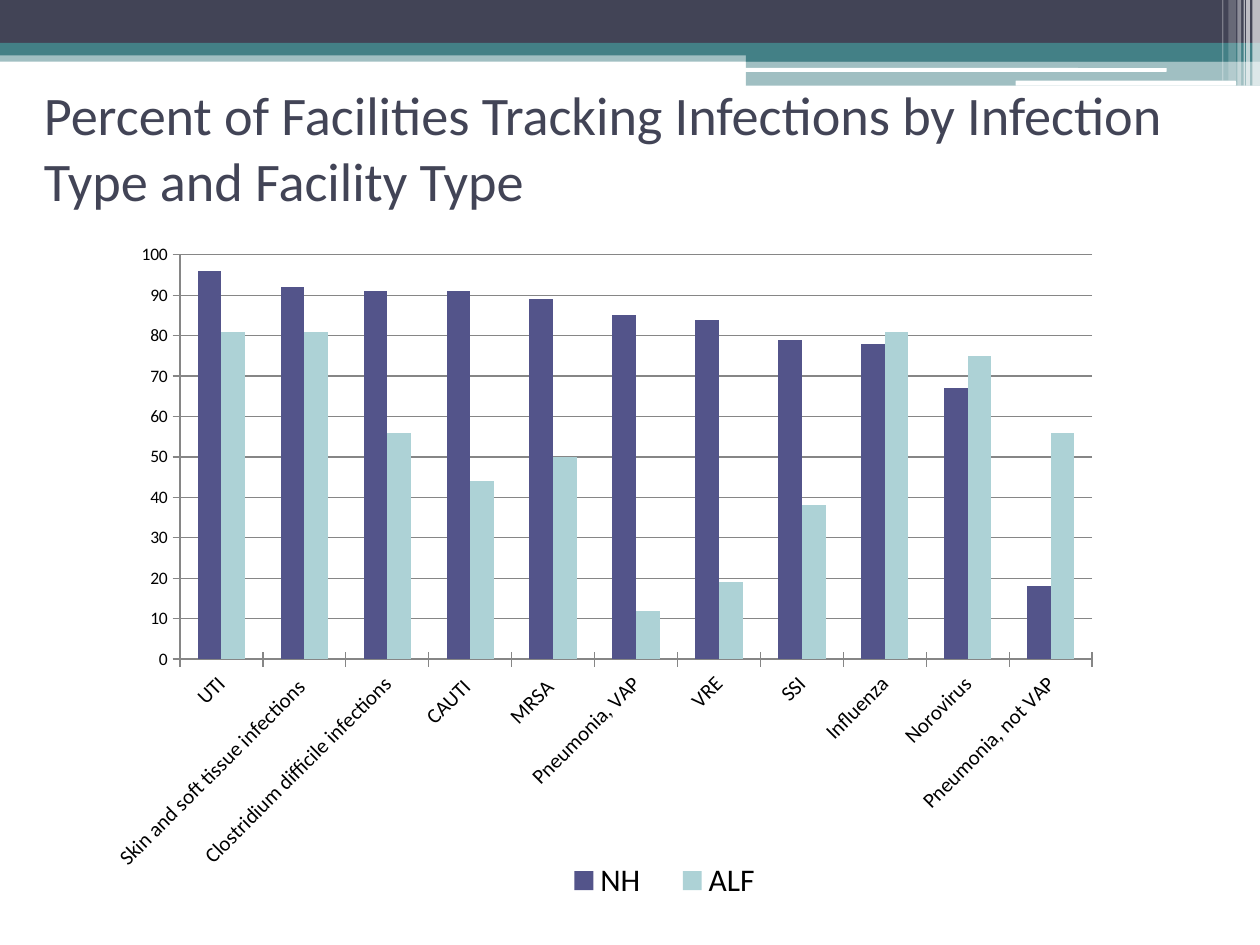
from lxml import etree
from pptx import Presentation
from pptx.chart.data import CategoryChartData
from pptx.dml.color import RGBColor
from pptx.enum.chart import XL_CHART_TYPE, XL_LEGEND_POSITION, XL_TICK_MARK
from pptx.enum.shapes import MSO_SHAPE
from pptx.enum.text import MSO_ANCHOR
from pptx.oxml import parse_xml
from pptx.oxml.ns import nsdecls, qn
from pptx.util import Inches, Pt

RECT, ROUNDED = MSO_SHAPE.RECTANGLE, MSO_SHAPE.ROUNDED_RECTANGLE
COLUMNS = XL_CHART_TYPE.COLUMN_CLUSTERED
BOTTOM = XL_LEGEND_POSITION.BOTTOM
CROSS = XL_TICK_MARK.CROSS
MIDDLE = MSO_ANCHOR.MIDDLE

FONT = "Calibri"
SLATE, TEAL, WHITE, BLACK, GRID = "424456", "438086", "FFFFFF", "000000", "868686"


def rgb(color):
    return RGBColor.from_string(color)


def manual_layout(x, y, w, h, inner=False):
    """Chart layout in fractions of the chart's size."""
    target = '<c:layoutTarget val="inner"/>' if inner else ""
    return parse_xml(
        f'<c:layout {nsdecls("c")}><c:manualLayout>{target}'
        '<c:xMode val="edge"/><c:yMode val="edge"/>'
        f'<c:x val="{x}"/><c:y val="{y}"/><c:w val="{w}"/><c:h val="{h}"/>'
        '</c:manualLayout></c:layout>')


class SlideBuilder:
    def __init__(self, slide, font):
        self.slide = slide
        self.font = font

    def style(self, font, size, color):
        font.name, font.size = self.font, Pt(size)
        font.color.rgb = rgb(color)

    def bar(self, left, top, width, height, color, opacity=100, kind=RECT):
        shape = self.slide.shapes.add_shape(
            kind, Inches(left), Inches(top), Inches(width), Inches(height))
        shape.shadow.inherit = False
        shape.line.fill.background()
        shape.fill.solid()
        shape.fill.fore_color.rgb = rgb(color)
        if opacity < 100:
            fill_color = shape.fill._xPr.find(".//" + qn("a:srgbClr"))
            etree.SubElement(fill_color, qn("a:alpha")).set("val", str(opacity * 1000))

    def title(self, text, left, top, width, height, size, color):
        frame = self.slide.shapes.add_textbox(
            Inches(left), Inches(top), Inches(width), Inches(height)).text_frame
        frame.word_wrap = True
        frame.vertical_anchor = MIDDLE
        frame.text = text
        self.style(frame.paragraphs[0].font, size, color)

    def column_chart(self, left, top, width, height, categories, series):
        data = CategoryChartData()
        data.categories = categories
        for name, values, _ in series:
            data.add_series(name, values)
        chart = self.slide.shapes.add_chart(
            COLUMNS, Inches(left), Inches(top), Inches(width), Inches(height), data).chart
        chart.has_title = False
        self.style(chart.font, 10, BLACK)

        # Columns
        plot = chart.plots[0]
        plot.vary_by_categories = False
        plot.gap_width, plot.overlap = 150, 0
        for columns, (_, _, color) in zip(plot.series, series):
            columns.format.fill.solid()
            columns.format.fill.fore_color.rgb = rgb(color)

        # Axes
        infections, percent = chart.category_axis, chart.value_axis
        for axis in (infections, percent):
            axis.major_tick_mark = CROSS
            axis.format.line.color.rgb = rgb(GRID)
        self.style(infections.tick_labels.font, 12, BLACK)
        infections._element.find(qn("c:txPr")).find(qn("a:bodyPr")).set("rot", "-2700000")
        percent.minimum_scale, percent.maximum_scale, percent.major_unit = 0, 100, 10
        percent.has_major_gridlines = True
        percent.major_gridlines.format.line.color.rgb = rgb(GRID)

        # Legend
        chart.has_legend = True
        legend = chart.legend
        legend.position = BOTTOM
        legend.include_in_layout = False
        self.style(legend.font, 18, BLACK)

        # Fixed places of plot area and legend
        plot_area = plot._element.getparent()
        for old in plot_area.findall(qn("c:layout")):
            plot_area.remove(old)
        plot_area.insert(0, manual_layout(0.084, 0.034, 0.896, 0.566, inner=True))
        for old in legend._element.findall(qn("c:layout")):
            legend._element.remove(old)
        legend._element.find(qn("c:legendPos")).addnext(
            manual_layout(0.44, 0.87, 0.24, 0.08))


def main():
    prs = Presentation()
    prs.slide_width, prs.slide_height = Inches(10), Inches(7.5)
    page = SlideBuilder(prs.slides.add_slide(prs.slide_layouts[6]), FONT)

    # Header bands
    page.bar(0, 0.4, 10, 0.09, TEAL, 50)
    page.bar(0, 0, 10, 0.34, SLATE)
    page.bar(0, 0.34, 10, 0.1, TEAL)
    page.bar(5.92, 0.39, 4.08, 0.1, TEAL)
    page.bar(5.92, 0.48, 4.08, 0.2, TEAL, 50)
    page.bar(5.91, 0.54, 3.35, 0.03, WHITE, kind=ROUNDED)
    page.bar(8.06, 0.64, 1.75, 0.04, WHITE, kind=ROUNDED)

    # Translucent stripes at the right edge
    for left, width, height, opacity in [
            (9.94, 0.06, 0.68, 65), (9.89, 0.03, 0.68, 65), (9.87, 0.01, 0.68, 60),
            (9.82, 0.03, 0.68, 40), (9.75, 0.06, 0.64, 20), (9.7, 0.01, 0.64, 30)]:
        page.bar(left, 0, width, height, WHITE, opacity)

    # Title
    page.title("Percent of Facilities Tracking Infections by Infection Type and Facility Type",
               0.25, 0.58, 9.33, 1.17, 31, SLATE)

    # Infection tracking by facility type
    page.column_chart(
        0.75, 1.83, 8.08, 5.67,
        ["UTI", "Skin and soft tissue infections ", "Clostridium difficile infections",
         "CAUTI ", "MRSA ", "Pneumonia, VAP", "VRE", "SSI", "Influenza", "Norovirus",
         "Pneumonia, not VAP"],
        [("NH", [96, 92, 91, 91, 89, 85, 84, 79, 78, 67, 18], "53548A"),
         ("ALF", [81, 81, 56, 44, 50, 12, 19, 38, 81, 75, 56], "ADD2D6")])

    prs.save("out.pptx")


if __name__ == "__main__":
    main()
